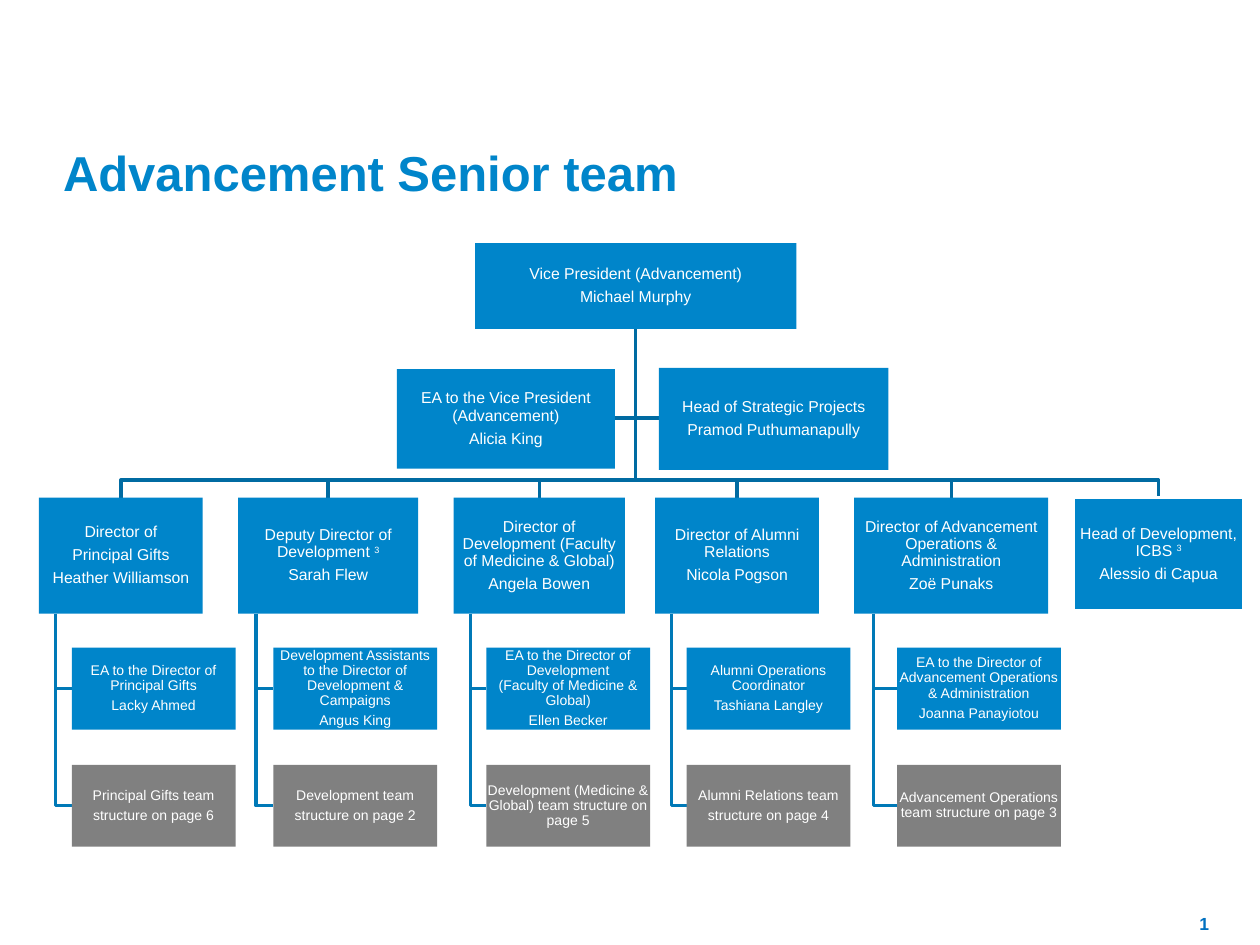
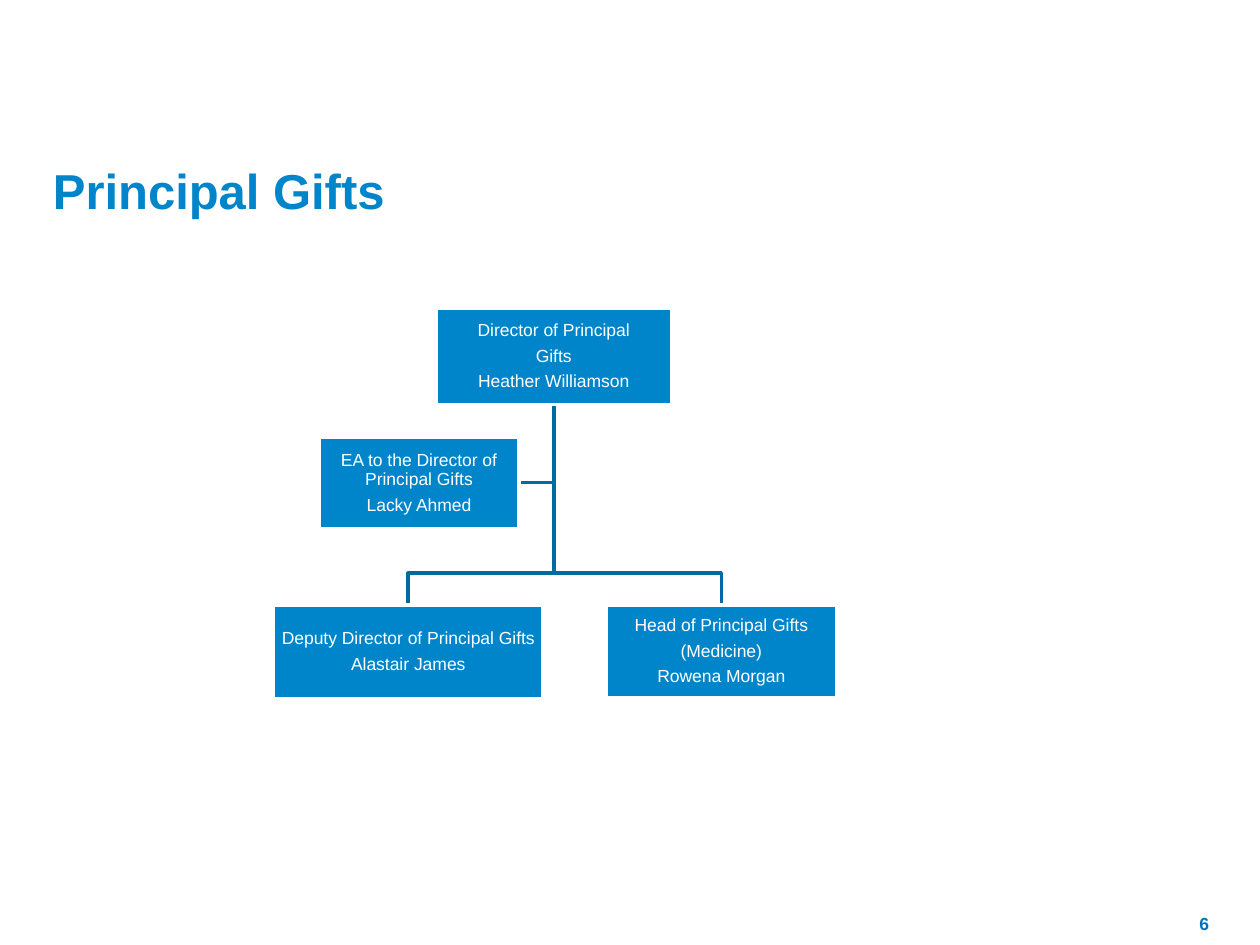
from dataclasses import dataclass

from pptx import Presentation
from pptx.dml.color import RGBColor
from pptx.enum.shapes import MSO_SHAPE
from pptx.enum.text import MSO_ANCHOR, MSO_AUTO_SIZE, PP_ALIGN
from pptx.util import Inches, Pt

BLUE = RGBColor(0x00, 0x85, 0xCA)
GREY = RGBColor(0x80, 0x80, 0x80)
WHITE = RGBColor(0xFF, 0xFF, 0xFF)
TRUNK = RGBColor(0x00, 0x6B, 0xA2)
BRANCH = RGBColor(0x00, 0x79, 0xB7)
NUMBER = RGBColor(0x00, 0x70, 0xC0)
FONT = "Arial"


@dataclass
class Box:
    """A post in the chart: its place in inches and its lines of text."""
    left: float
    top: float
    width: float
    height: float
    lines: list
    edge: bool = False

    @property
    def mid(self):
        return self.left + self.width / 2

    @property
    def foot(self):
        return self.top + self.height


# left, width, lines of the director, left of the team, lines of the
# assistant, lines of the team
UNITS = [
    (0.31, 1.3, ["Director of", "Principal Gifts", "Heather Williamson"],
     0.57, ["EA to the Director of Principal Gifts", "Lacky Ahmed"],
     ["Principal Gifts team", "structure on page 6"]),
    (1.89, 1.43, ["Deputy Director of Development ^3", "Sarah Flew"],
     2.17, ["Development Assistants to the Director of Development & Campaigns",
            "Angus King"],
     ["Development team", "structure on page 2"]),
    (3.6, 1.36, ["Director of Development (Faculty of Medicine & Global)",
                 "Angela Bowen"],
     3.86, ["EA to the Director of Development\n(Faculty of Medicine & Global)",
            "Ellen Becker"],
     ["Development (Medicine & Global) team structure on page 5"]),
    (5.2, 1.3, ["Director of Alumni Relations", "Nicola Pogson"],
     5.45, ["Alumni Operations Coordinator", "Tashiana Langley"],
     ["Alumni Relations team", "structure on page 4"]),
    (6.78, 1.54, ["Director of Advancement Operations & Administration",
                  "Zoë Punaks"],
     7.12, ["EA to the Director of Advancement Operations & Administration",
            "Joanna Panayiotou"],
     ["Advancement Operations team structure on page 3"]),
]


def write(frame, lines, size, color, bold=False, align=PP_ALIGN.LEFT,
          anchor=MSO_ANCHOR.TOP, inset=(0.1, 0.05, 0.1, 0.05),
          spacing=1.0, gap=0):
    """Fill a text frame; in a line, ^ starts a superscript."""
    frame.word_wrap = True
    frame.auto_size = MSO_AUTO_SIZE.NONE
    frame.vertical_anchor = anchor
    (frame.margin_left, frame.margin_top,
     frame.margin_right, frame.margin_bottom) = map(Inches, inset)
    for i, line in enumerate(lines):
        para = frame.add_paragraph() if i else frame.paragraphs[0]
        para.alignment = align
        para.line_spacing = spacing
        para.space_before = Pt(gap if i else 0)
        base, _, mark = line.partition("^")
        for j, part in enumerate(base.split("\n")):
            if j:
                para.add_line_break()
            style(para.add_run(), part, size, color, bold)
        if mark:
            run = para.add_run()
            style(run, mark, size, color, bold)
            run._r.get_or_add_rPr().set("baseline", "30000")


def style(run, text, size, color, bold):
    run.text = text
    run.font.name = FONT
    run.font.size = Pt(size)
    run.font.bold = bold
    run.font.color.rgb = color


def add_slide(prs, title, left, top, number):
    slide = prs.slides.add_slide(prs.slide_layouts[5])
    head = slide.shapes.title
    head.left, head.top = Inches(left), Inches(top)
    head.width, head.height = Inches(9), Inches(0.56)
    write(head.text_frame, [title], 28, BLUE, bold=True,
          anchor=MSO_ANCHOR.MIDDLE, inset=(0, 0.05, 0, 0))
    foot = slide.shapes.add_textbox(
        Inches(9.42), Inches(7.2), Inches(0.46), Inches(0.17))
    write(foot.text_frame, [number], 10, NUMBER, bold=True)
    return slide


def add_box(slide, box, size, fill=BLUE):
    shape = slide.shapes.add_shape(
        MSO_SHAPE.RECTANGLE, Inches(box.left), Inches(box.top),
        Inches(box.width), Inches(box.height))
    shape.shadow.inherit = False
    shape.fill.solid()
    shape.fill.fore_color.rgb = fill
    if box.edge:
        shape.line.color.rgb = WHITE
        shape.line.width = Pt(2)
    else:
        shape.line.fill.background()
    write(shape.text_frame, box.lines, size, WHITE, align=PP_ALIGN.CENTER,
          anchor=MSO_ANCHOR.MIDDLE, inset=[0.01] * 4,
          spacing=0.9, gap=0.38 * size)


def add_wire(slide, points, color=TRUNK):
    start, *rest = [(Inches(x), Inches(y)) for x, y in points]
    pen = slide.shapes.build_freeform(*start)
    pen.add_line_segments(rest, close=False)
    wire = pen.convert_to_shape()
    wire.shadow.inherit = False
    wire.fill.background()
    wire.line.color.rgb = color
    wire.line.width = Pt(2)


def add_drop(slide, boss, box, rise):
    """Wire a boss to a box below, by a bar that lies rise above the box."""
    bar = box.top - rise
    add_wire(slide, [(boss.mid, boss.foot), (boss.mid, bar),
                     (box.mid, bar), (box.mid, box.top)])


def add_side(slide, x, top, end, y, color=TRUNK):
    """Wire from a point down to the height y, then across to end."""
    add_wire(slide, [(x, top), (x, y), (end, y)], color)


def senior_team(prs):
    slide = add_slide(prs, "Advancement Senior team", 0.5, 1.06, "1")
    chief = Box(3.77, 1.93, 2.55, 0.68,
                ["Vice President (Advancement)", "Michael Murphy"])
    aide = Box(3.15, 2.93, 1.73, 0.79,
               ["EA to the Vice President (Advancement)", "Alicia King"])
    planner = Box(5.23, 2.92, 1.82, 0.81,
                  ["Head of Strategic Projects", "Pramod Puthumanapully"])
    heads, aides, teams = [], [], []
    for left, width, lead, inner, help_lines, team in UNITS:
        heads.append(Box(left, 3.95, width, 0.92, lead))
        aides.append(Box(inner, 5.14, 1.3, 0.65, help_lines))
        teams.append(Box(inner, 6.07, 1.3, 0.65, team))
    school = Box(8.52, 3.95, 1.35, 0.9,
                 ["Head of Development, ICBS ^3", "Alessio di Capua"], True)

    for end in (planner.left, aide.left + aide.width):
        add_side(slide, chief.mid, chief.foot, end, 3.32)
    for head in heads + [school]:
        add_drop(slide, chief, head, 0.14)
    for head, *staff in zip(heads, aides, teams):
        for box in staff:
            add_side(slide, head.left + head.width / 10, head.foot,
                     box.left, box.top + box.height / 2, BRANCH)
    for box in [chief, aide, planner, *heads, school]:
        add_box(slide, box, 9)
    for box in aides:
        add_box(slide, box, 8)
    for box in teams:
        add_box(slide, box, 8, GREY)


def gifts_team(prs):
    slide = add_slide(prs, "Principal Gifts", 0.42, 1.2, "6")
    chief = Box(3.46, 2.45, 1.87, 0.76,
                ["Director of Principal", "Gifts", "Heather Williamson"], True)
    aide = Box(2.53, 3.47, 1.59, 0.73,
               ["EA to the Director of Principal Gifts", "Lacky Ahmed"], True)
    deputy = Box(2.17, 4.8, 2.14, 0.75,
                 ["Deputy Director of Principal Gifts", "Alastair James"], True)
    medic = Box(4.81, 4.8, 1.83, 0.74,
                ["Head of Principal Gifts", "(Medicine)", "Rowena Morgan"],
                True)
    add_side(slide, chief.mid, chief.foot, aide.left + aide.width, 3.83)
    for box in (medic, deputy):
        add_drop(slide, chief, box, 0.25)
    for box in (chief, deputy, medic, aide):
        add_box(slide, box, 10)


def main():
    prs = Presentation()
    prs.slide_width, prs.slide_height = Inches(10), Inches(7.5)
    senior_team(prs)
    gifts_team(prs)
    prs.save("out.pptx")


if __name__ == "__main__":
    main()
